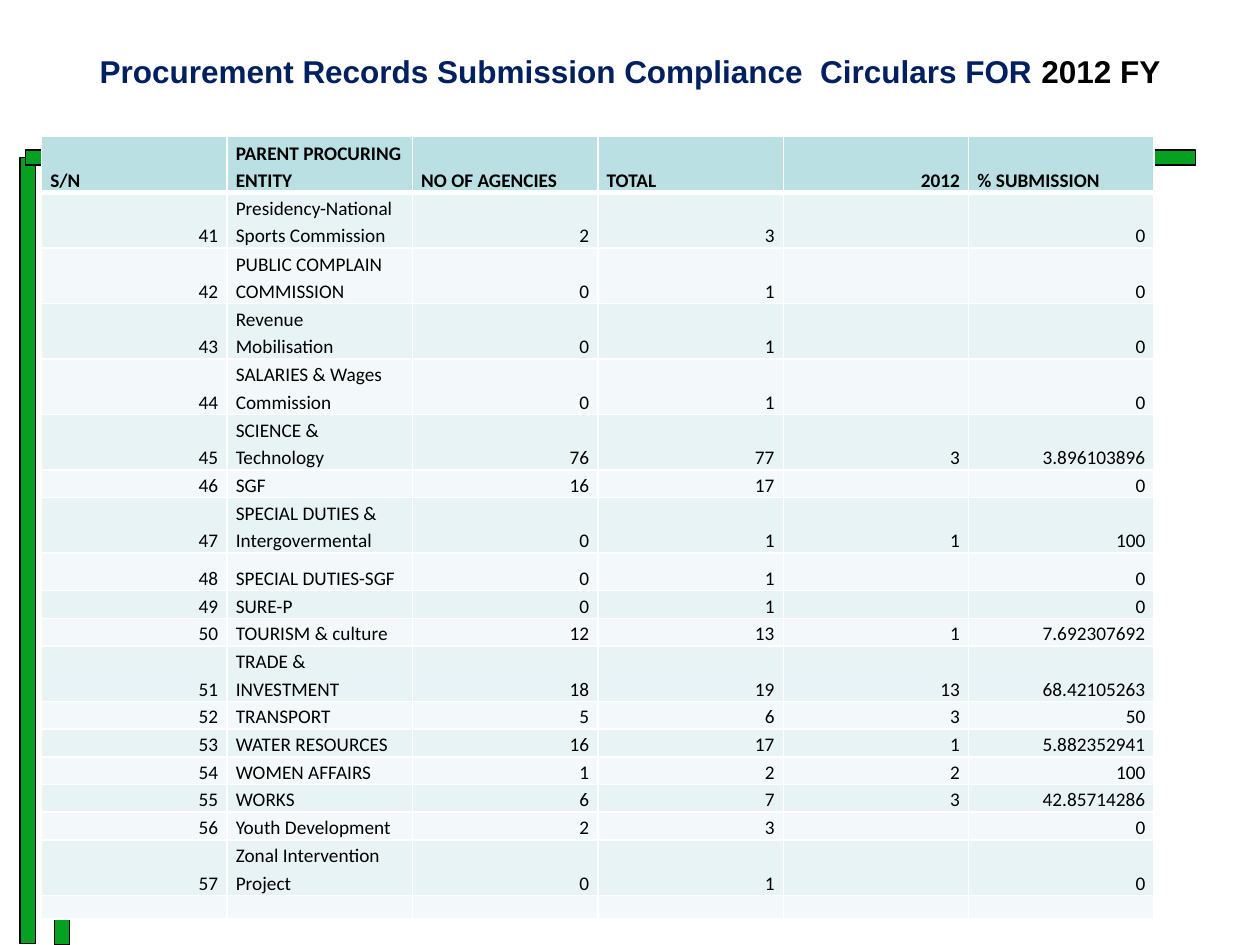
from lxml import etree
from pptx import Presentation
from pptx.dml.color import RGBColor
from pptx.enum.shapes import MSO_SHAPE
from pptx.enum.text import MSO_ANCHOR, PP_ALIGN
from pptx.oxml.ns import qn
from pptx.util import Inches, Pt

RECT = MSO_SHAPE.RECTANGLE
BOTTOM, MIDDLE = MSO_ANCHOR.BOTTOM, MSO_ANCHOR.MIDDLE
LEFT, RIGHT, CENTER = PP_ALIGN.LEFT, PP_ALIGN.RIGHT, PP_ALIGN.CENTER

COLORS = {
    "bar": "07A121",
    "text": "000000",
    "title": "002060",
    "header": "BBE0E3",
    "odd": "E7F3F4",
    "even": "F3F9FA",
    "border": "FFFFFF",
}

BARS = [(0.16, 1.25, 0.12, 6.24), (0.43, 1.26, 0.12, 6.24), (0.2, 1.19, 9.29, 0.12)]

# Row height in inches, then the cell values; None leaves a cell empty
ONE_LINE, TWO_LINES = 0.22, 0.44
ROWS = [
    (0.45, "S/N", "PARENT PROCURING ENTITY", "NO OF AGENCIES", "TOTAL", 2012, "% SUBMISSION"),
    (TWO_LINES, 41, "Presidency-National Sports Commission", 2, 3, None, 0),
    (TWO_LINES, 42, "PUBLIC COMPLAIN COMMISSION", 0, 1, None, 0),
    (TWO_LINES, 43, "Revenue Mobilisation", 0, 1, None, 0),
    (TWO_LINES, 44, "SALARIES & Wages Commission", 0, 1, None, 0),
    (TWO_LINES, 45, "SCIENCE & Technology", 76, 77, 3, 3.896103896),
    (ONE_LINE, 46, "SGF", 16, 17, None, 0),
    (TWO_LINES, 47, "SPECIAL DUTIES & Intergovermental", 0, 1, 1, 100),
    (0.3, 48, "SPECIAL DUTIES-SGF", 0, 1, None, 0),
    (ONE_LINE, 49, "SURE-P", 0, 1, None, 0),
    (ONE_LINE, 50, "TOURISM & culture", 12, 13, 1, 7.692307692),
    (TWO_LINES, 51, "TRADE & INVESTMENT", 18, 19, 13, 68.42105263),
    (ONE_LINE, 52, "TRANSPORT", 5, 6, 3, 50),
    (ONE_LINE, 53, "WATER RESOURCES", 16, 17, 1, 5.882352941),
    (ONE_LINE, 54, "WOMEN AFFAIRS", 1, 2, 2, 100),
    (ONE_LINE, 55, "WORKS", 6, 7, 3, 42.85714286),
    (ONE_LINE, 56, "Youth Development", 2, 3, None, 0),
    (TWO_LINES, 57, "Zonal Intervention Project", 0, 1, None, 0),
    (0.14, None, None, None, None, None, None),
]


def rgb(name):
    return RGBColor.from_string(COLORS[name])


def add_bar(s, x, y, w, h):
    sp = s.shapes.add_shape(RECT, Inches(x), Inches(y), Inches(w), Inches(h))
    sp.shadow.inherit = False
    sp.fill.solid()
    sp.fill.fore_color.rgb = rgb("bar")
    sp.line.color.rgb = rgb("text")
    sp.line.width = Pt(0.75)


def set_title(s, x, y, w, h):
    sp = s.shapes.title
    sp.left, sp.top, sp.width, sp.height = Inches(x), Inches(y), Inches(w), Inches(h)
    tf = sp.text_frame
    tf.word_wrap = True
    tf.vertical_anchor = MIDDLE
    p = tf.paragraphs[0]
    p.alignment = CENTER
    p.font.size, p.font.name, p.font.bold = Pt(18), "Arial", True
    for text, color in (
        ("Procurement Records Submission Compliance  Circulars FOR ", "title"),
        ("2012 FY", "text"),
    ):
        r = p.add_run()
        r.text = text
        r.font.color.rgb = rgb(color)


def set_borders(cell, bottom):
    tc_pr = cell._tc.get_or_add_tcPr()
    widths = {"a:lnL": 1, "a:lnR": 1, "a:lnT": 1, "a:lnB": bottom}
    for i, (tag, width) in enumerate(widths.items()):
        ln = etree.Element(qn(tag), w=str(Pt(width)))
        fill = etree.SubElement(ln, qn("a:solidFill"))
        etree.SubElement(fill, qn("a:srgbClr"), val=COLORS["border"])
        tc_pr.insert(i, ln)


def format_cell(cell, value, fill, header):
    cell.fill.solid()
    cell.fill.fore_color.rgb = rgb(fill)
    cell.vertical_anchor = BOTTOM
    cell.margin_left = cell.margin_right = Inches(0.07)
    cell.margin_top = cell.margin_bottom = 0
    p = cell.text_frame.paragraphs[0]
    p.line_spacing = 1.15
    p.alignment = LEFT if isinstance(value, str) else RIGHT
    p.font.size, p.font.name, p.font.bold = Pt(11), "Calibri", header
    p.font.color.rgb = rgb("text")
    if value is not None:
        p.add_run().text = str(value)
    set_borders(cell, bottom=3 if header else 1)


def add_records_table(s, x, y, w, h):
    n_cols = len(ROWS[0]) - 1
    frame = s.shapes.add_table(len(ROWS), n_cols, Inches(x), Inches(y), Inches(w), Inches(h))
    table = frame.table
    for col in table.columns:
        col.width = Inches(w / n_cols)
    for i, (height, *values) in enumerate(ROWS):
        table.rows[i].height = Inches(height)
        fill = "header" if i == 0 else "odd" if i % 2 else "even"
        for j, value in enumerate(values):
            format_cell(table.cell(i, j), value, fill, header=i == 0)


def main():
    prs = Presentation()
    prs.slide_width, prs.slide_height = Inches(10), Inches(7.5)
    s = prs.slides.add_slide(prs.slide_layouts[5])

    # Green frame behind the table
    for bar in BARS:
        add_bar(s, *bar)

    # Compliance records
    add_records_table(s, 0.33, 1.08, 8.83, 6.24)

    # Heading
    set_title(s, 0.5, 0.3, 9, 0.53)

    prs.save("out.pptx")


if __name__ == "__main__":
    main()
